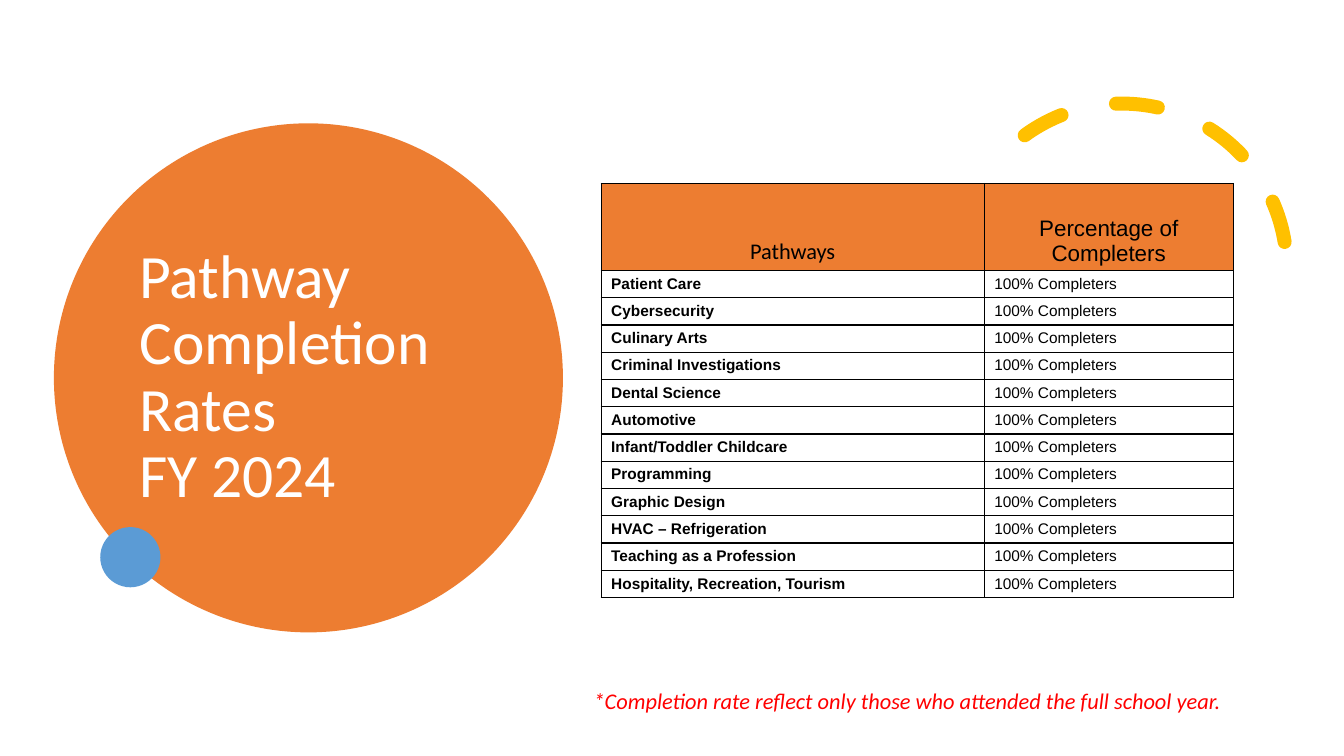
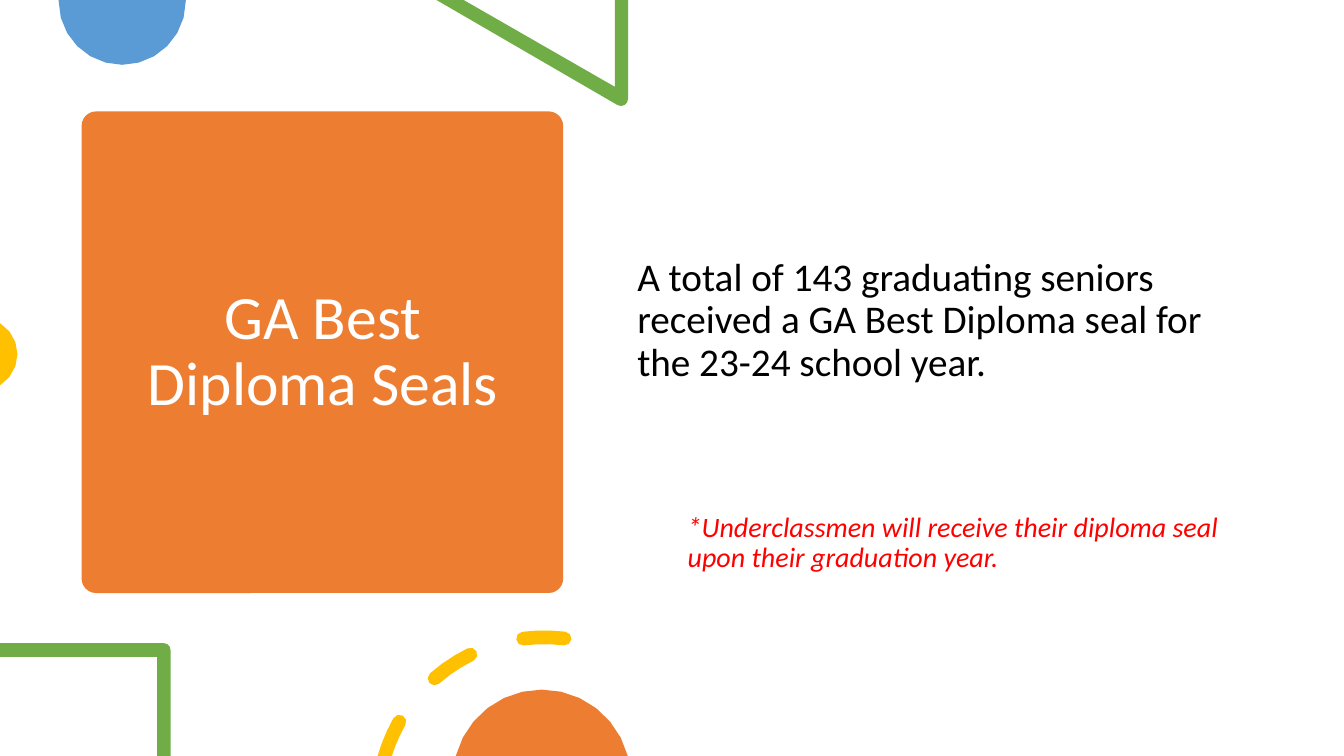
from math import asin, cos, degrees, radians, sin

from lxml import etree
from pptx import Presentation
from pptx.dml.color import RGBColor
from pptx.enum import dml, shapes, text
from pptx.oxml import ns
from pptx.util import Pt

ORANGE = RGBColor(0xED, 0x7D, 0x31)
BLUE = RGBColor(0x5B, 0x9B, 0xD5)
GREEN = RGBColor(0x70, 0xAD, 0x47)
YELLOW = RGBColor(0xFF, 0xC0, 0x00)
RED = RGBColor(0xFF, 0x00, 0x00)
BLACK = RGBColor(0x00, 0x00, 0x00)
WHITE = RGBColor(0xFF, 0xFF, 0xFF)

SLIDE_WIDTH, SLIDE_HEIGHT = 960, 540
TITLE_ONLY = 5
LEFT, CENTER = text.PP_ALIGN.LEFT, text.PP_ALIGN.CENTER

PATHWAYS = [
    "Patient Care", "Cybersecurity", "Culinary Arts",
    "Criminal Investigations", "Dental Science", "Automotive",
    "Infant/Toddler Childcare", "Programming", "Graphic Design",
    "HVAC – Refrigeration", "Teaching as a Profession",
    "Hospitality, Recreation, Tourism",
]


def format_paragraph(paragraph, size, color, align=LEFT, font="Calibri",
                     bold=False, italic=False):
    paragraph.alignment = align
    paragraph.font.name = font
    paragraph.font.size = Pt(size)
    paragraph.font.bold = bold
    paragraph.font.italic = italic
    paragraph.font.color.rgb = color


def add_title(slide, wording, left, top, width, height, align=LEFT):
    """Place the title in front of what has been drawn so far."""
    title = slide.shapes.title
    slide.shapes.element.append(title.element)
    title.left, title.top = Pt(left), Pt(top)
    title.width, title.height = Pt(width), Pt(height)
    frame = title.text_frame
    frame.text = wording
    frame.word_wrap = True
    frame.auto_size = text.MSO_AUTO_SIZE.NONE
    frame.vertical_anchor = text.MSO_ANCHOR.MIDDLE
    frame.paragraphs[0].line_spacing = 0.9
    format_paragraph(frame.paragraphs[0], 44, WHITE, align)


def add_text_frame(slide, wording, left, top, width, height):
    frame = slide.shapes.add_textbox(
        Pt(left), Pt(top), Pt(width), Pt(height)).text_frame
    frame.word_wrap = True
    frame.text = wording
    return frame


def paint(shape, color):
    shape.shadow.inherit = False
    shape.fill.solid()
    shape.fill.fore_color.rgb = color
    shape.line.fill.background()


def add_solid(slide, preset, left, top, width, height, color):
    shape = slide.shapes.add_shape(
        preset, Pt(left), Pt(top), Pt(width), Pt(height))
    paint(shape, color)
    return shape


def add_outline(slide, color, *contours):
    """Draw one filled shape from one or more closed contours."""
    first, *others = [[(Pt(x), Pt(y)) for x, y in contour]
                      for contour in contours]
    builder = slide.shapes.build_freeform(*first[0])
    builder.add_line_segments(first[1:], close=True)
    for contour in others:
        builder.move_to(*contour[0])
        builder.add_line_segments(contour[1:], close=True)
    paint(builder.convert_to_shape(), color)


def arc_points(center_x, center_y, radius, start, end, steps):
    """Points on an arc; degrees run clockwise from the right."""
    angles = [radians(start + (end - start) * i / steps)
              for i in range(steps + 1)]
    return [(center_x + radius * cos(a), center_y + radius * sin(a))
            for a in angles]


def dash_contour(x, y, radius, half, start, end):
    """Thick curved dash with round ends; start None cuts it at the slide's foot."""
    def cap(angle, turn):
        a = radians(angle)
        return arc_points(x + radius * cos(a), y + radius * sin(a),
                          half, angle + turn, angle + turn + 180, 4)[1:-1]

    outer, inner = radius + half, radius - half
    if start is None:
        outer_start, inner_start = (
            180 + degrees(asin((y - SLIDE_HEIGHT) / r)) for r in (outer, inner))
        start_cap = []
    else:
        outer_start = inner_start = start
        start_cap = cap(start, 180)
    return (arc_points(x, y, outer, outer_start, end, 3) + cap(end, 0)
            + arc_points(x, y, inner, end, inner_start, 3) + start_cap)


def add_dashed_arc(slide, left, top, size, rotation):
    arc = slide.shapes.add_shape(
        shapes.MSO_SHAPE.ARC, Pt(left), Pt(top), Pt(size), Pt(size))
    arc.adjustments[0], arc.adjustments[1] = 158.17, 17.81
    arc.rotation = rotation
    arc.shadow.inherit = False
    arc.fill.background()
    arc.line.color.rgb = YELLOW
    arc.line.width = Pt(10)
    arc.line.dash_style = dml.MSO_LINE.DASH
    arc.element.spPr.find(ns.qn("a:ln")).set("cap", "rnd")


def border_cell(cell):
    properties = cell._tc.get_or_add_tcPr()
    for index, side in enumerate(("lnL", "lnR", "lnT", "lnB")):
        line = etree.Element(ns.qn(f"a:{side}"), w=str(Pt(1)))
        fill = etree.SubElement(line, ns.qn("a:solidFill"))
        etree.SubElement(fill, ns.qn("a:srgbClr"), val=str(BLACK))
        properties.insert(index, line)


def fill_cell(cell, wording, size, color=None, **style):
    cell.text = wording
    cell.margin_top = cell.margin_bottom = Pt(3.4)
    if color is None:
        cell.fill.background()
    else:
        cell.fill.solid()
        cell.fill.fore_color.rgb = color
    border_cell(cell)
    format_paragraph(cell.text_frame.paragraphs[0], size, BLACK, **style)


def add_completion_table(slide, left, top):
    header_height, row_height, widths = 62.2, 19.5, (273.6, 178)
    table = slide.shapes.add_table(
        len(PATHWAYS) + 1, 2, Pt(left), Pt(top), Pt(sum(widths)),
        Pt(header_height + row_height * len(PATHWAYS))).table
    table.first_row = table.horz_banding = False
    for column, width in zip(table.columns, widths):
        column.width = Pt(width)
    table.rows[0].height = Pt(header_height)
    headings = (("Pathways", "Calibri"), ("Percentage of Completers", "Arial"))
    for index, (heading, font) in enumerate(headings):
        cell = table.cell(0, index)
        cell.vertical_anchor = text.MSO_ANCHOR.BOTTOM
        fill_cell(cell, heading, 16, ORANGE, align=CENTER, font=font)
    for row, pathway in enumerate(PATHWAYS, 1):
        table.rows[row].height = Pt(row_height)
        fill_cell(table.cell(row, 0), pathway, 11, font="Arial", bold=True)
        fill_cell(table.cell(row, 1), "100% Completers", 11, font="Arial")


def build_completion_slide(slide):
    oval = shapes.MSO_SHAPE.OVAL
    add_solid(slide, oval, 38.5, 88.1, 363.6, 363.6, ORANGE)
    add_title(slide, "Pathway Completion\vRates \vFY 2024", 92.2, 109.8, 255, 320.4)
    add_dashed_arc(slide, 683.8, 74, 235.4, 330.2)
    add_solid(slide, oval, 71.6, 376.5, 43, 43, BLUE)
    add_completion_table(slide, 429.4, 131)
    footnote = add_text_frame(
        slide, "*Completion rate reflect only those who attended the full "
        "school year. ", 378, 487.4, 543.6, 26.6)
    format_paragraph(footnote.paragraphs[0], 16, RED, CENTER, italic=True)


def add_corner_decorations_above(slide):
    add_outline(slide, BLUE, arc_points(87.3, 0.9, 45.4, 0, 180, 12)
                + [(41.9, 0), (132.7, 0)])
    add_outline(slide, GREEN,
                [(448.6, 0), (439.2, 0), (439.2, 62), (331.2, 0), (311.8, 0)]
                + arc_points(443.6, 70.7, 5, 120, 0, 4))
    add_outline(slide, YELLOW, arc_points(-13.4, 253, 25.9, -58.3, 58.3, 6))


def add_corner_decorations_below(slide):
    add_outline(slide, GREEN,
                [(0, 459.4)] + arc_points(117, 464.2, 4.8, 270, 360, 3)
                + [(121.8, SLIDE_HEIGHT), (112.3, SLIDE_HEIGHT),
                   (112.3, 469.2), (0, 469.2)])
    sweeps = ((None, 209.6), (228.8, 243.7), (262.7, 277))
    add_outline(slide, YELLOW, *(dash_contour(388.8, 574.2, 119, 4.9, *sweep)
                                 for sweep in sweeps))
    add_outline(slide, ORANGE, arc_points(387, 556.1, 63.5, 194.7, 345.3, 12))


def add_seals_message(slide):
    frame = add_text_frame(
        slide, "A total of 143 graduating seniors received a GA Best Diploma "
        "seal for the 23-24 school year.\n*Underclassmen will receive their "
        "diploma seal upon their graduation year.", 448.1, 87.8, 445.7, 336.2)
    frame.margin_top = Pt(96.2)
    total, remark = frame.paragraphs
    total.line_spacing = remark.line_spacing = 0.9
    format_paragraph(total, 28, BLACK)
    format_paragraph(remark, 20, RED, italic=True)
    remark.space_before = Pt(92)
    remark.level = 1
    indent = remark._p.get_or_add_pPr()
    indent.set("marL", str(Pt(36)))
    indent.set("indent", "0")


def build_seals_slide(slide):
    panel = add_solid(slide, shapes.MSO_SHAPE.ROUNDED_RECTANGLE,
                      58.3, 79.6, 344, 344, ORANGE)
    panel.adjustments[0] = 0.03
    add_title(slide, "GA Best Diploma Seals", 75.6, 87.8, 310.3, 328.3, CENTER)
    add_corner_decorations_above(slide)
    add_seals_message(slide)
    add_corner_decorations_below(slide)


def main():
    deck = Presentation()
    deck.slide_width, deck.slide_height = Pt(SLIDE_WIDTH), Pt(SLIDE_HEIGHT)
    for build in (build_completion_slide, build_seals_slide):
        build(deck.slides.add_slide(deck.slide_layouts[TITLE_ONLY]))
    deck.save("out.pptx")


if __name__ == "__main__":
    main()
